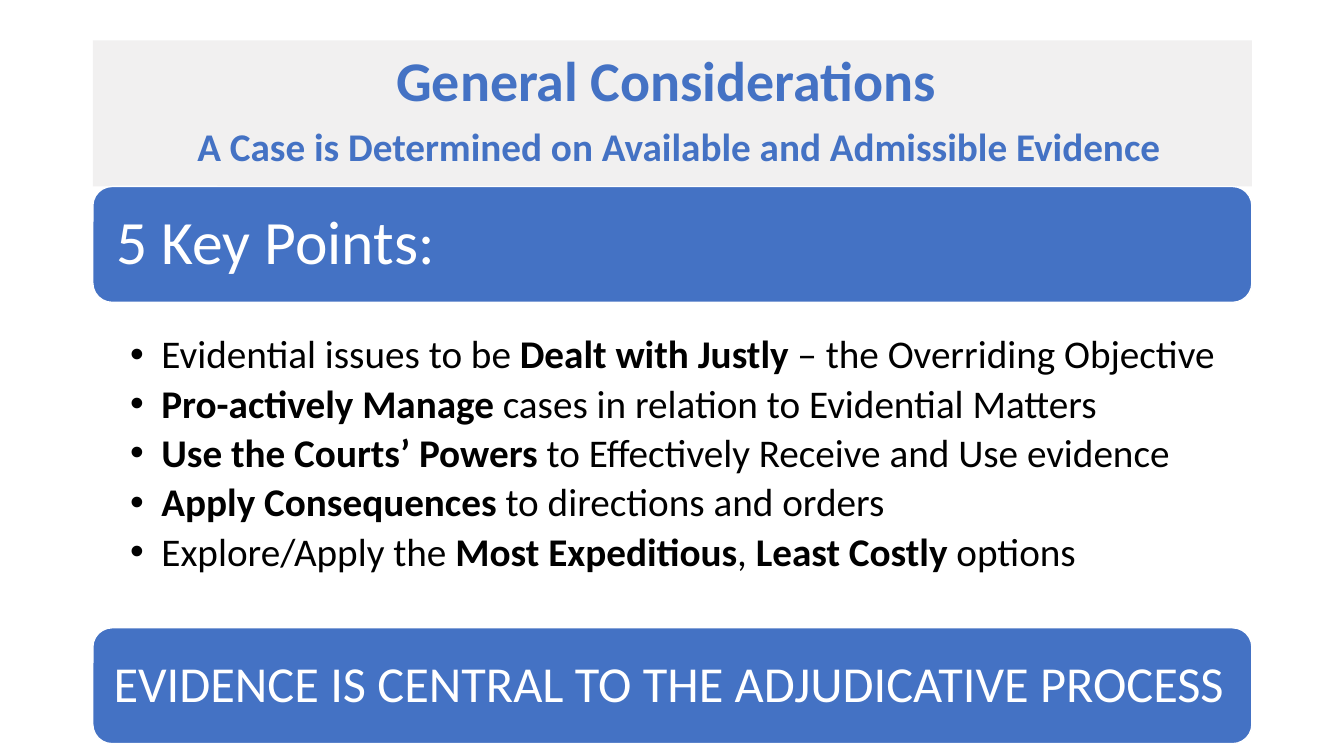
from dataclasses import dataclass

from lxml import etree
from pptx import Presentation
from pptx.dml.color import RGBColor
from pptx.enum.shapes import MSO_SHAPE
from pptx.enum.text import MSO_ANCHOR, PP_ALIGN
from pptx.oxml.ns import qn
from pptx.util import Cm, Pt

RECT, ROUND = MSO_SHAPE.RECTANGLE, MSO_SHAPE.ROUNDED_RECTANGLE
TOP, MIDDLE = MSO_ANCHOR.TOP, MSO_ANCHOR.MIDDLE
LEFT, CENTER = PP_ALIGN.LEFT, PP_ALIGN.CENTER


@dataclass(frozen=True)
class Theme:
    font: str = "Calibri"
    blue: RGBColor = RGBColor(0x44, 0x72, 0xC4)
    gray: RGBColor = RGBColor(0xF1, 0xF0, 0xF0)
    white: RGBColor = RGBColor(0xFF, 0xFF, 0xFF)
    black: RGBColor = RGBColor(0, 0, 0)
    title: int = 40
    body: int = 28
    head: int = 44
    close: int = 36


theme = Theme()
EDGE, WIDTH = Cm(2.34), Cm(29.21)
BAR = Cm(2.92)


def style(run, size, color, bold=False):
    font = run.font
    font.name, font.size, font.bold = theme.font, Pt(size), bold
    font.color.rgb = color


def set_frame(shape, anchor, left, right, side):
    """Set wrapping, anchor and insets in cm, and return the text frame."""
    frame = shape.text_frame
    frame.word_wrap = True
    frame.vertical_anchor = anchor
    frame.margin_left, frame.margin_right = Cm(left), Cm(right)
    frame.margin_top = frame.margin_bottom = Cm(side)
    return frame


deck = Presentation()
deck.slide_width, deck.slide_height = Cm(33.87), Cm(19.05)
slide = deck.slides.add_slide(deck.slide_layouts[6])
shapes = slide.shapes

# Title band
band = shapes.add_shape(RECT, EDGE, Cm(1.02), WIDTH, Cm(3.68))
band.shadow.inherit = False
band.fill.solid()
band.fill.fore_color.rgb = theme.gray
band.line.fill.background()
para = set_frame(band, MIDDLE, 0.25, 0.25, 0.13).paragraphs[0]
para.text = "General Considerations \v "
para.alignment, para.line_spacing = CENTER, 0.9
for run in para.runs:
    style(run, theme.title, theme.blue, True)
run = para.add_run()
run.text = "A Case is Determined on Available and Admissible Evidence"
style(run, theme.body, theme.blue, True)

# Blue bars
bars = [
    ("5 Key Points:", 4.7, theme.head, 0.46),
    ("EVIDENCE IS CENTRAL TO THE ADJUDICATIVE PROCESS", 15.82, theme.close, 0.38),
]
for text, top, size, inset in bars:
    bar = shapes.add_shape(ROUND, EDGE, Cm(top), WIDTH, BAR)
    bar.shadow.inherit = False
    bar.fill.solid()
    bar.fill.fore_color.rgb = theme.blue
    bar.line.color.rgb, bar.line.width = theme.white, Pt(1)
    para = set_frame(bar, MIDDLE, inset, inset, inset).paragraphs[0]
    para.text = text
    para.alignment, para.line_spacing = LEFT, 0.9
    style(para.runs[0], size, theme.white)

# Key points: every second part between bars is bold
points = [
    "Evidential issues to be |Dealt with Justly| – the Overriding Objective",
    "|Pro-actively Manage |cases in relation to Evidential Matters",
    "|Use the Courts’ Powers |to Effectively Receive and Use evidence",
    "|Apply Consequences |to directions and orders",
    "Explore/Apply the |Most Expeditious|, |Least Costly |options",
]
box = shapes.add_textbox(EDGE, Cm(8.31), WIDTH, Cm(6.83))
frame = set_frame(box, TOP, 0.94, 0.71, 0.13)
for row, point in enumerate(points):
    para = frame.add_paragraph() if row else frame.paragraphs[0]
    para.line_spacing, para.space_after = 0.9, Pt(5)
    for part, text in enumerate(point.split("|")):
        if text:
            run = para.add_run()
            run.text = text
            style(run, theme.body, theme.black, part % 2 == 1)
    props = para._p.get_or_add_pPr()
    props.set("marL", str(Cm(0.79)))
    props.set("indent", str(-Cm(0.79)))
    etree.SubElement(props, qn("a:buFont")).set("typeface", "Arial")
    etree.SubElement(props, qn("a:buChar")).set("char", "•")

deck.save("out.pptx")
